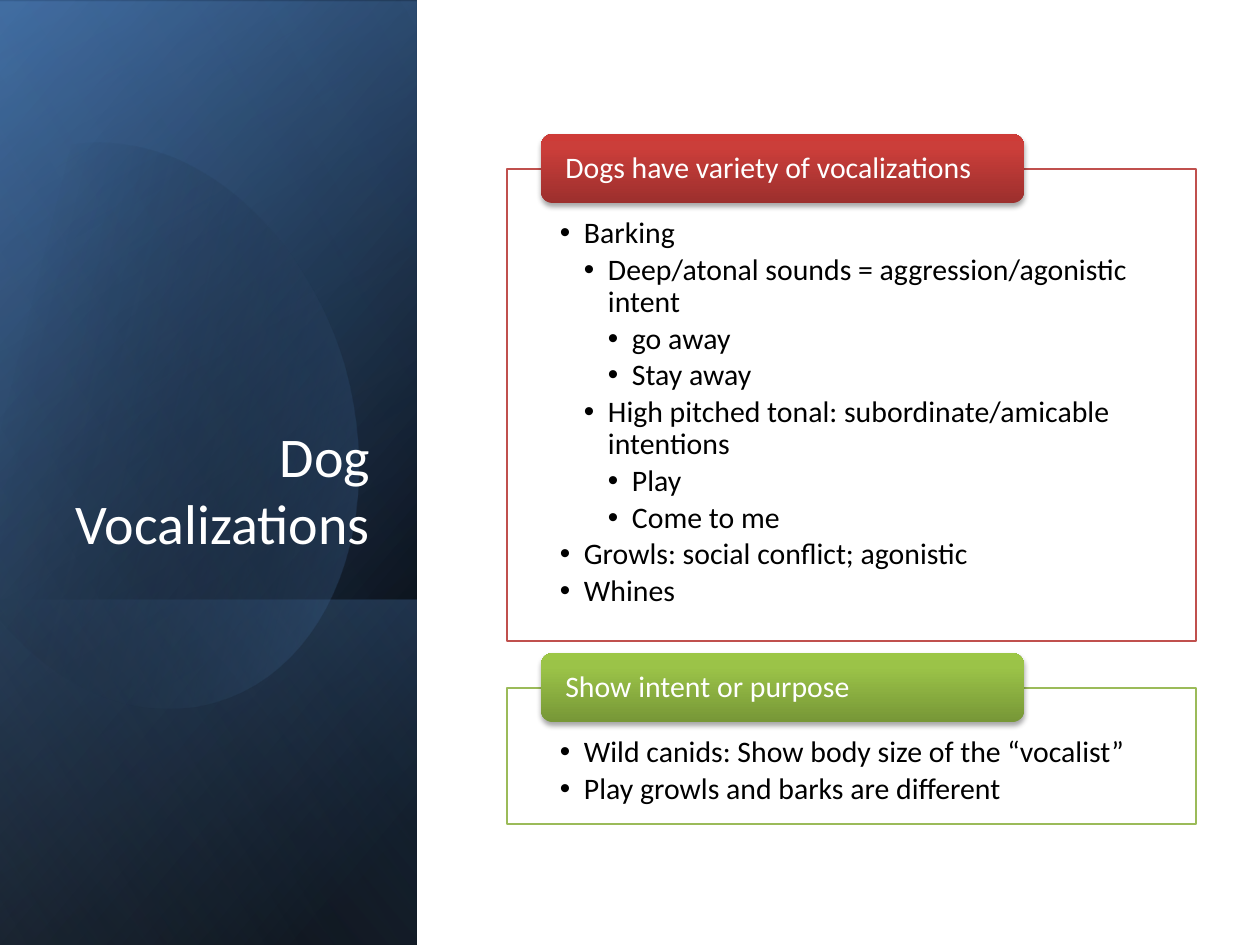
import math

from lxml import etree
from pptx import Presentation
from pptx.dml.color import RGBColor
from pptx.enum.shapes import MSO_SHAPE
from pptx.enum.text import MSO_ANCHOR, MSO_AUTO_SIZE, PP_ALIGN
from pptx.oxml.ns import qn
from pptx.util import Pt

RECTANGLE = MSO_SHAPE.RECTANGLE
ROUNDED = MSO_SHAPE.ROUNDED_RECTANGLE
TOP, MIDDLE, BOTTOM = MSO_ANCHOR.TOP, MSO_ANCHOR.MIDDLE, MSO_ANCHOR.BOTTOM
LEFT, RIGHT = PP_ALIGN.LEFT, PP_ALIGN.RIGHT
NO_AUTO_SIZE = MSO_AUTO_SIZE.NONE

EMU_PER_PX = 914400 / 126
FONT = "Calibri"
INDENT = 24
COLORS = {
    "white": "FFFFFF", "black": "000000", "navy": "376092",
    "blue": "4F81BD", "pale_blue": "95B3D7",
    "red": "C0504D", "red_dark": "9C2F2D", "red_mid": "CB3E3A", "red_light": "CE3B37",
    "green": "9BBB59", "green_dark": "779737", "green_mid": "9BC348", "green_light": "9DC746",
}
PANELS = [
    ((-264, 264, 945, 417), [(8, "black", 100), (100, "navy", 100)], 50),
    ((-264, 266, 945, 417), [(0, "black", 0), (99, "blue", 46)], 30),
    ((36, 564, 345, 417), [(2, "blue", 29), (100, "black", 30)], 130),
]
GLOSS = ((-264, 264, 945, 417), [(0, "black", 0), (99, "pale_blue", 11)], 120)
BLOB_CENTER = (150, 421)
BLOB_ROTATION = 343.9
BLOB_START = (121, 144)
BLOB_SEGMENTS = [
    [(215, 154), (307, 242), (344, 365)],
    [(387, 519), (330, 669), (215, 702)],
    [(144, 723), (67, 693), (9, 630)],
    [(-4, 615)],
    [(-32, 209)],
    [(-19, 194)],
    [(3, 173), (28, 158), (57, 148)],
    [(78, 142), (100, 141), (121, 144)],
]
SECTIONS = [
    (169, 472, "red", "Dogs have variety of vocalizations", [
        (1, "Barking"),
        (2, "Deep/atonal sounds = aggression/agonistic intent"),
        (3, "go away"),
        (3, "Stay away"),
        (2, "High pitched tonal: subordinate/amicable intentions"),
        (3, "Play"),
        (3, "Come to me"),
        (1, "Growls: social conflict; agonistic"),
        (1, "Whines"),
    ]),
    (688, 136, "green", "Show intent or purpose", [
        (1, "Wild canids: Show body size of the “vocalist”"),
        (1, "Play growls and barks are different"),
    ]),
]


def px(value):
    return round(value * EMU_PER_PX)


def color(name):
    return RGBColor.from_string(COLORS[name])


def add_color(parent, name, opacity):
    element = etree.SubElement(parent, qn("a:srgbClr"), val=COLORS[name])
    if opacity < 100:
        etree.SubElement(element, qn("a:alpha"), val=str(opacity * 1000))


def set_gradient(shape, stops, angle):
    shape.fill.background()
    properties = shape.element.spPr
    gradient = etree.Element(qn("a:gradFill"), rotWithShape="1")
    stop_list = etree.SubElement(gradient, qn("a:gsLst"))
    for position, name, opacity in stops:
        stop = etree.SubElement(stop_list, qn("a:gs"), pos=str(position * 1000))
        add_color(stop, name, opacity)
    etree.SubElement(gradient, qn("a:lin"), ang=str(angle * 60000), scaled="0")
    properties.replace(properties.find(qn("a:noFill")), gradient)


def add_box(slide, kind, box):
    shape = slide.shapes.add_shape(kind, *map(px, box))
    shape.shadow.inherit = False
    shape.line.fill.background()
    return shape


def add_panel(slide, box, stops, angle):
    shape = add_box(slide, RECTANGLE, box)
    set_gradient(shape, stops, angle)
    shape.rotation = 90
    shape.element.spPr.find(qn("a:xfrm")).set("flipH", "1")
    return shape


def curve_points(start, first, second, end, steps=24):
    for step in range(1, steps + 1):
        t = step / steps
        weights = ((1 - t) ** 3, 3 * t * (1 - t) ** 2, 3 * t * t * (1 - t), t ** 3)
        yield tuple(sum(w * p[axis] for w, p in zip(weights, (start, first, second, end)))
                    for axis in (0, 1))


def turn(point, degrees):
    angle = math.radians(degrees)
    x, y = point[0] - BLOB_CENTER[0], point[1] - BLOB_CENTER[1]
    return (px(BLOB_CENTER[0] + x * math.cos(angle) - y * math.sin(angle)),
            px(BLOB_CENTER[1] + x * math.sin(angle) + y * math.cos(angle)))


def add_blob(slide):
    points = [BLOB_START]
    for segment in BLOB_SEGMENTS:
        points += curve_points(points[-1], *segment) if len(segment) == 3 else segment
    outline = [turn(point, 360 - BLOB_ROTATION) for point in points]
    builder = slide.shapes.build_freeform(*outline[0])
    builder.add_line_segments(outline[1:], close=True)
    shape = builder.convert_to_shape()
    shape.shadow.inherit = False
    shape.line.fill.background()
    set_gradient(shape, [(29, "black", 0), (100, "blue", 43)], 30)
    shape.rotation = BLOB_ROTATION


def set_frame(shape, anchor, insets):
    frame = shape.text_frame
    frame.word_wrap = True
    frame.auto_size = NO_AUTO_SIZE
    frame.vertical_anchor = anchor
    frame.margin_left, frame.margin_top, frame.margin_right, frame.margin_bottom = map(px, insets)
    return frame


def write(paragraph, text, size, name, alignment):
    paragraph.alignment = alignment
    run = paragraph.add_run()
    run.text = text
    run.font.name = FONT
    run.font.size = Pt(size)
    run.font.color.rgb = color(name)


def add_title(slide):
    title = slide.shapes.title
    title.left, title.top, title.width, title.height = map(px, (60, 232, 323, 330))
    frame = set_frame(title, BOTTOM, (13, 6, 13, 6))
    write(frame.paragraphs[0], "Dog Vocalizations", 32, "white", RIGHT)
    slide.shapes[-1].element.addnext(title.element)


def add_body(slide, top, height, accent, items):
    body = add_box(slide, RECTANGLE, (507, top, 689, height))
    body.fill.solid()
    body.fill.fore_color.rgb = color("white")
    fill_color = body.element.spPr.find(qn("a:solidFill"))[0]
    etree.SubElement(fill_color, qn("a:alpha"), val="90000")
    body.line.color.rgb = color(accent)
    body.line.width = Pt(0.75)
    frame = set_frame(body, TOP, (53, 49, 53, 16))
    for index, (level, text) in enumerate(items):
        paragraph = frame.add_paragraph() if index else frame.paragraphs[0]
        properties = paragraph._p.get_or_add_pPr()
        properties.set("marL", str(px(INDENT * level)))
        properties.set("indent", str(-px(INDENT)))
        etree.SubElement(properties, qn("a:buFont"), typeface="Arial")
        etree.SubElement(properties, qn("a:buChar"), char="•")
        paragraph.level = level
        paragraph.line_spacing = 0.9
        paragraph.space_after = Pt(2.6)
        write(paragraph, text, 17, "black", LEFT)


def add_header(slide, top, accent, text):
    header = add_box(slide, ROUNDED, (541, top, 483, 69))
    shades = zip((0, 80, 100), ("dark", "mid", "light"))
    set_gradient(header, [(position, f"{accent}_{shade}", 100) for position, shade in shades], 270)
    effects = header.element.spPr.find(qn("a:effectLst"))
    shadow = etree.SubElement(effects, qn("a:outerShdw"), blurRad=str(Pt(3.1)),
                              dist=str(Pt(1.8)), dir="5400000", rotWithShape="0")
    add_color(shadow, "black", 35)
    paragraph = set_frame(header, MIDDLE, (21, 3, 21, 3)).paragraphs[0]
    paragraph.line_spacing = 0.9
    write(paragraph, text, 17, "white", LEFT)


def main():
    presentation = Presentation()
    presentation.slide_width, presentation.slide_height = px(1260), px(945)
    slide = presentation.slides.add_slide(presentation.slide_layouts[5])
    for panel in PANELS:
        add_panel(slide, *panel)
    add_blob(slide)
    add_panel(slide, *GLOSS)
    add_title(slide)
    for top, height, accent, heading, items in SECTIONS:
        add_body(slide, top, height, accent, items)
        add_header(slide, top - 35, accent, heading)
    presentation.save("out.pptx")


if __name__ == "__main__":
    main()
